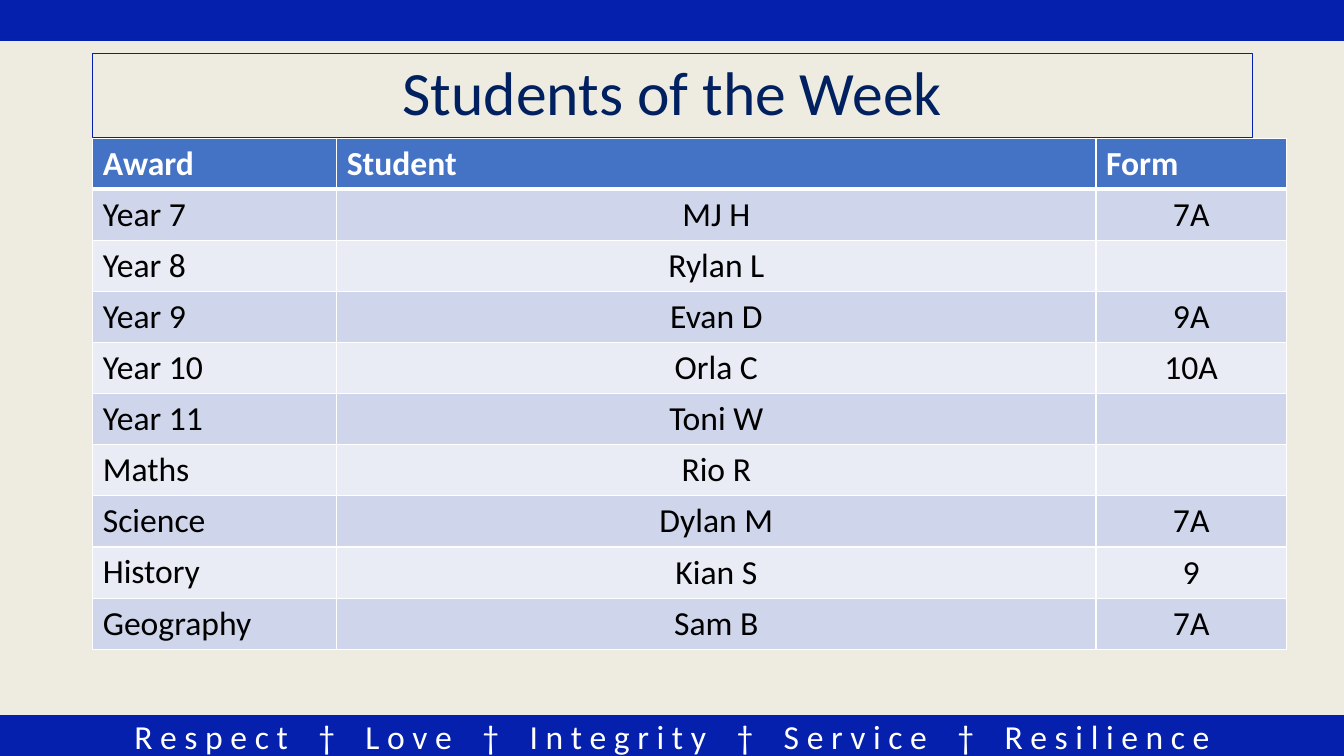
from lxml.etree import SubElement
from pptx import Presentation
from pptx.dml.color import RGBColor
from pptx.enum.shapes import MSO_SHAPE as Preset
from pptx.enum.text import MSO_ANCHOR as Anchor, MSO_AUTO_SIZE as AutoSize, PP_ALIGN as Align
from pptx.oxml.ns import qn
from pptx.util import Inches, Pt

VALUES = ["Respect", "Love", "Integrity", "Service", "Resilience"]
HEADINGS = ["Award", "Student", "Form"]
AWARDS = [
    ("Year 7", "MJ H", "7A"),
    ("Year 8", "Rylan L", ""),
    ("Year 9", "Evan D", "9A"),
    ("Year 10", "Orla C", "10A"),
    ("Year 11", "Toni W", ""),
    ("Maths", "Rio R", ""),
    ("Science", "Dylan M", "7A"),
    ("History", "Kian S", "9"),
    ("Geography", "Sam B", "7A"),
]
COLUMN_WIDTHS = [2.42, 7.53, 1.89]
ROW_HEIGHT = 0.5


def colour(value):
    return RGBColor.from_string(value)


def style(target, formats):
    for name, value in formats.items():
        setattr(target, name, value)


class AwardSlide:
    """Holds the school style and the slide being filled."""

    font = "Calibri"
    blue, navy, white, black = "0420AC", "002060", "FFFFFF", "000000"
    header_fill, band_fills = "4472C4", ["CFD5EA", "E9EBF5"]
    name_cell = {
        "vertical_anchor": Anchor.BOTTOM,
        "margin_left": Inches(0.01),
        "margin_right": Inches(0.01),
        "margin_top": Inches(0.01),
        "margin_bottom": Inches(0.05),
    }

    def __init__(self, deck):
        self.slide = deck.slides.add_slide(deck.slide_layouts[5])
        background = self.slide.background.fill
        background.solid()
        background.fore_color.rgb = colour("EEECE1")

    def add_text(self, paragraph, text, size, ink, bold=False):
        run = paragraph.add_run()
        run.text = text
        style(run.font, {"name": self.font, "size": Pt(size), "bold": bold})
        run.font.color.rgb = colour(ink)
        return run

    def outline(self, shape, width):
        shape.line.color.rgb = colour(self.blue)
        shape.line.width = Pt(width)

    def title(self, text, left, top, width, height):
        title = self.slide.shapes.title
        style(title, {"left": Inches(left), "top": Inches(top),
                      "width": Inches(width), "height": Inches(height)})
        self.outline(title, 0.75)
        style(title.text_frame, {"vertical_anchor": Anchor.MIDDLE, "word_wrap": True,
                                 "auto_size": AutoSize.NONE})
        heading = title.text_frame.paragraphs[0]
        style(heading, {"alignment": Align.CENTER, "line_spacing": 0.9})
        self.add_text(heading, text, 44, self.navy)

    def band(self, top):
        band = self.slide.shapes.add_shape(
            Preset.RECTANGLE, 0, Inches(top), Inches(13.33), Inches(0.4))
        band.shadow.inherit = False
        band.fill.solid()
        band.fill.fore_color.rgb = colour(self.blue)
        self.outline(band, 1)
        return band

    def motto(self, band, values):
        style(band.text_frame, {"vertical_anchor": Anchor.MIDDLE, "word_wrap": True})
        line = band.text_frame.paragraphs[0]
        line.alignment = Align.CENTER
        for index, value in enumerate(values):
            if index:
                for mark in (" ", "†", " "):
                    run = self.add_text(line, mark, 24, self.white)
                    if mark == " ":
                        run.font._element.set("spc", "1630")
            self.add_text(line, " ".join(value), 24, self.white)

    def borders(self, cell, bottom):
        properties = cell._tc.get_or_add_tcPr()
        for side, width in {"lnL": 1, "lnR": 1, "lnT": 1, "lnB": bottom}.items():
            edge = SubElement(properties, qn(f"a:{side}"), w=str(Pt(width)))
            fill = SubElement(edge, qn("a:solidFill"))
            SubElement(fill, qn("a:srgbClr"), val=self.white)

    def cell(self, cell, text, row, column):
        header = row == 0
        self.borders(cell, 3 if header else 1)
        cell.fill.solid()
        cell.fill.fore_color.rgb = colour(
            self.header_fill if header else self.band_fills[(row - 1) % 2])
        if not text:
            return
        entry = cell.text_frame.paragraphs[0]
        if not header and column:
            style(cell, self.name_cell)
            entry.alignment = Align.CENTER
        self.add_text(entry, text, 24, self.white if header else self.black, header)

    def table(self, rows, left, top, widths, row_height):
        table = self.slide.shapes.add_table(
            len(rows), len(widths), Inches(left), Inches(top),
            Inches(sum(widths)), Inches(row_height * len(rows))).table
        for column, width in zip(table.columns, widths):
            column.width = Inches(width)
        for r, entries in enumerate(rows):
            for c, text in enumerate(entries):
                self.cell(table.cell(r, c), text, r, c)


def main():
    deck = Presentation()
    style(deck, {"slide_width": Inches(13.33), "slide_height": Inches(7.5)})
    awards = AwardSlide(deck)
    awards.motto(awards.band(7.1), VALUES)
    awards.band(0)
    awards.title("Students of the Week", 0.92, 0.53, 11.5, 0.83)
    awards.table([HEADINGS, *AWARDS], 0.92, 1.37, COLUMN_WIDTHS, ROW_HEIGHT)
    deck.save("out.pptx")


if __name__ == "__main__":
    main()
